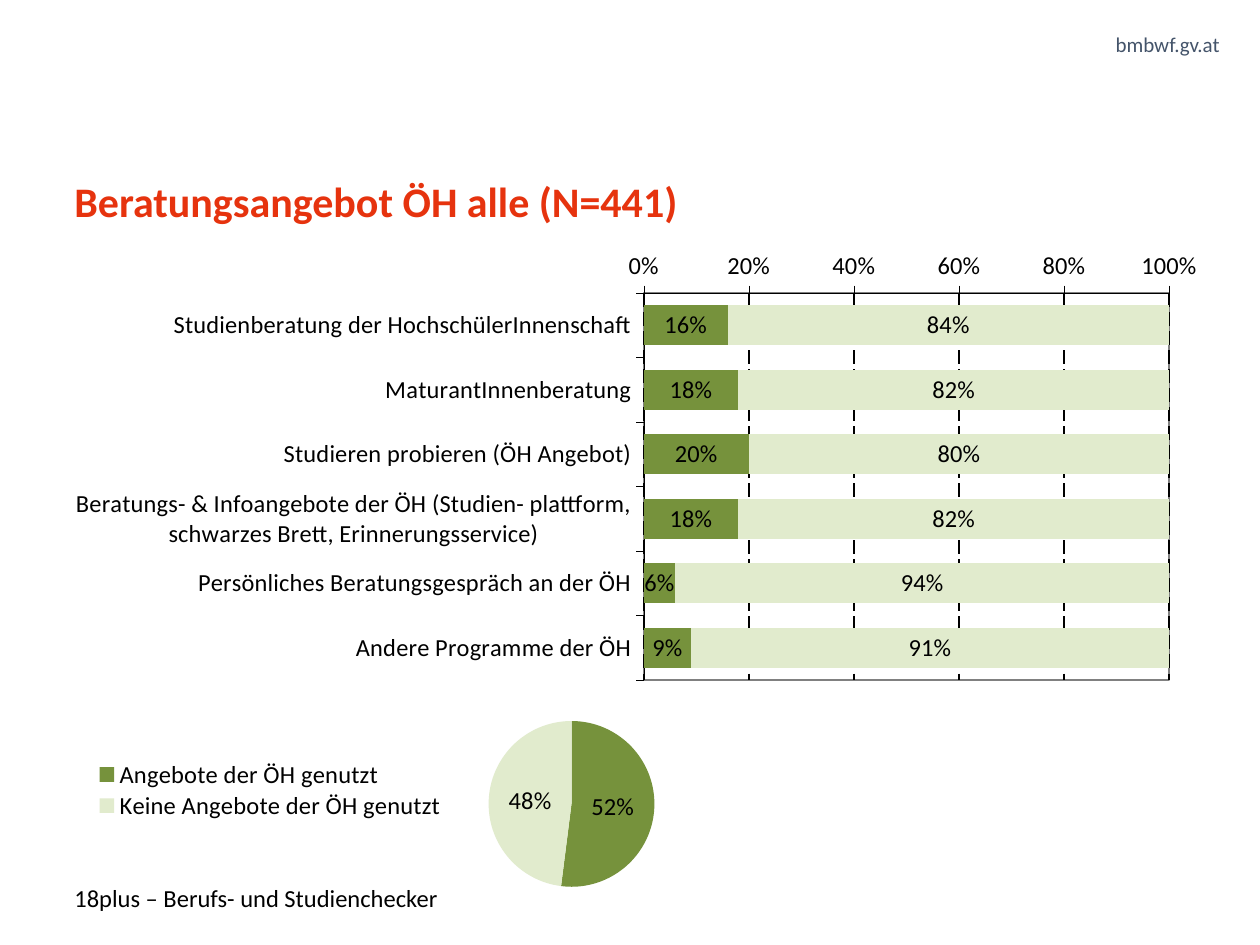
from dataclasses import dataclass
from typing import Optional

from lxml import etree
from pptx import Presentation
from pptx.chart.data import CategoryChartData
from pptx.dml.color import RGBColor
from pptx.enum.chart import XL_CHART_TYPE, XL_LABEL_POSITION, XL_LEGEND_POSITION, XL_TICK_MARK
from pptx.enum.dml import MSO_LINE
from pptx.enum.text import MSO_ANCHOR, PP_ALIGN
from pptx.oxml import parse_xml
from pptx.oxml.ns import nsdecls, qn
from pptx.util import Pt

BAR, PIE = XL_CHART_TYPE.BAR_STACKED, XL_CHART_TYPE.PIE
CENTER, OUTSIDE = XL_LABEL_POSITION.CENTER, XL_TICK_MARK.OUTSIDE
LEFT, RIGHT = PP_ALIGN.LEFT, PP_ALIGN.RIGHT
TOP, MIDDLE = MSO_ANCHOR.TOP, MSO_ANCHOR.MIDDLE

FONT = "Calibri"
BLACK, GREEN, PALE = "000000", "76923C", "E1EBCD"


@dataclass
class Box:
    left: float
    top: float
    width: float
    height: float

    def points(self) -> tuple:
        return Pt(self.left), Pt(self.top), Pt(self.width), Pt(self.height)


@dataclass
class Label:
    text: str
    box: Box
    size: float
    color: str = BLACK
    bold: bool = False
    align: PP_ALIGN = LEFT
    anchor: MSO_ANCHOR = TOP
    spacing: Optional[float] = None


@dataclass
class Series:
    name: str
    values: list
    color: str = GREEN


TITLE = Label("Beratungsangebot ÖH alle (N=441)", Box(42.5, 103.7, 628.5, 65.5), 24,
              color="E6330E", bold=True, spacing=0.9)
LABELS = [
    Label("bmbwf.gv.at", Box(523.5, 18, 173.5, 14.5), 12, color="44546A", align=RIGHT),
    Label("18plus – Berufs- und Studienchecker", Box(42.5, 502.5, 541.5, 21), 14,
          anchor=MIDDLE),
]
OFFERS = [
    "Studienberatung der HochschülerInnenschaft",
    "MaturantInnenberatung",
    "Studieren probieren (ÖH Angebot)",
    "Beratungs- & Infoangebote der ÖH (Studien- plattform, schwarzes Brett, "
    "Erinnerungsservice)",
    "Persönliches Beratungsgespräch an der ÖH",
    "Andere Programme der ÖH",
]
USED = [0.16, 0.18, 0.2, 0.18, 0.06, 0.09]
OFFER_SERIES = [Series("ja", USED),
                Series("nein", [round(1 - v, 2) for v in USED], PALE)]
USAGE = ["Angebote der ÖH genutzt", "Keine Angebote der ÖH genutzt"]
USAGE_SERIES = [Series("Nutzung", [0.52, 0.48])]


def rgb(color: str) -> RGBColor:
    return RGBColor.from_string(color)


def set_attrs(obj, values: dict) -> None:
    for name, value in values.items():
        setattr(obj, name, value)


def set_font(font, size: float, color: str = BLACK, bold: bool = False) -> None:
    set_attrs(font, {"name": FONT, "size": Pt(size), "bold": bold})
    font.color.rgb = rgb(color)


def fill(fmt, color: str) -> None:
    fmt.fill.solid()
    fmt.fill.fore_color.rgb = rgb(color)


def write(sp, label: Label) -> None:
    tf = sp.text_frame
    set_attrs(tf, {"margin_left": 0, "margin_top": 0, "margin_right": 0,
                   "margin_bottom": 0, "word_wrap": True,
                   "vertical_anchor": label.anchor})
    p = tf.paragraphs[0]
    set_attrs(p, {"alignment": label.align, "line_spacing": label.spacing})
    r = p.add_run()
    r.text = label.text
    set_font(r.font, label.size, label.color, label.bold)


def place(parent, index: int, box: Box, inner: bool = False) -> None:
    """Give a plot area or legend a manual layout in fractions of the chart."""
    for old in parent.findall(qn("c:layout")):
        parent.remove(old)
    layout = etree.Element(qn("c:layout"))
    manual = etree.SubElement(layout, qn("c:manualLayout"))
    values = {"layoutTarget": "inner"} if inner else {}
    values.update(xMode="edge", yMode="edge", x=box.left, y=box.top,
                  w=box.width, h=box.height)
    for tag, value in values.items():
        etree.SubElement(manual, qn(f"c:{tag}")).set("val", str(value))
    parent.insert(index, layout)


def add_chart(s, kind: XL_CHART_TYPE, box: Box, plot_box: Box, categories: list,
              series: list):
    data = CategoryChartData(number_format="0%")
    data.categories = categories
    for item in series:
        data.add_series(item.name, item.values)
    chart = s.shapes.add_chart(kind, *box.points(), data).chart
    set_attrs(chart, {"has_title": False, "has_legend": False})
    set_font(chart.font, 14)
    plot = chart.plots[0]
    set_attrs(plot, {"has_data_labels": True, "vary_by_categories": kind == PIE})
    set_attrs(plot.data_labels, {"show_value": True, "show_percentage": False,
                                 "number_format": "0%", "position": CENTER,
                                 "number_format_is_linked": False})
    set_font(plot.data_labels.font, 14)
    place(chart.element.xpath("c:chart/c:plotArea")[0], 0, plot_box, inner=True)
    return chart


def add_offer_chart(s) -> None:
    chart = add_chart(s, BAR, Box(14.4, 142.6, 669.6, 276.5),
                      Box(0.53, 0.09, 0.45, 0.8), OFFERS, OFFER_SERIES)
    set_attrs(chart.plots[0], {"gap_width": 60, "overlap": 100})
    for ser, item in zip(chart.plots[0].series, OFFER_SERIES):
        fill(ser.format, item.color)
    chart.category_axis.reverse_order = True
    axis = chart.value_axis
    set_attrs(axis, {"minimum_scale": 0, "maximum_scale": 1, "major_unit": 0.2,
                     "has_major_gridlines": True})
    set_attrs(axis.tick_labels, {"number_format": "0%",
                                 "number_format_is_linked": False})
    for ax in (chart.category_axis, axis):
        ax.major_tick_mark = OUTSIDE
        ax.format.line.width = Pt(0.25)
        ax.format.line.color.rgb = rgb(BLACK)
    grid = axis.major_gridlines.format.line
    grid.color.rgb = rgb(BLACK)
    set_attrs(grid, {"width": Pt(1), "dash_style": MSO_LINE.LONG_DASH})
    chart.element.xpath("c:chart/c:plotArea")[0].append(parse_xml(
        f'<c:spPr {nsdecls("c", "a")}>'
        '<a:solidFill><a:srgbClr val="FFFFFF"/></a:solidFill>'
        '<a:ln w="12700"><a:solidFill><a:srgbClr val="808080"/></a:solidFill></a:ln>'
        '</c:spPr>'))


def add_usage_chart(s) -> None:
    chart = add_chart(s, PIE, Box(25.2, 401.8, 430.6, 113),
                      Box(0.59, 0.09, 0.22, 0.84), USAGE, USAGE_SERIES)
    for i, color in enumerate((GREEN, PALE)):
        fill(chart.plots[0].series[0].points[i].format, color)
    chart.has_legend = True
    set_attrs(chart.legend, {"position": XL_LEGEND_POSITION.LEFT,
                             "include_in_layout": False})
    set_font(chart.legend.font, 14)
    place(chart.element.xpath("c:chart/c:legend")[0], 1, Box(0.06, 0.28, 0.48, 0.32))


def main() -> None:
    prs = Presentation()
    prs.slide_width, prs.slide_height = Pt(720), Pt(540)
    s = prs.slides.add_slide(prs.slide_layouts[5])
    title = s.shapes.title
    title.left, title.top, title.width, title.height = TITLE.box.points()
    write(title, TITLE)
    for label in LABELS:
        write(s.shapes.add_textbox(*label.box.points()), label)
    add_offer_chart(s)
    add_usage_chart(s)
    prs.save("out.pptx")


if __name__ == "__main__":
    main()
